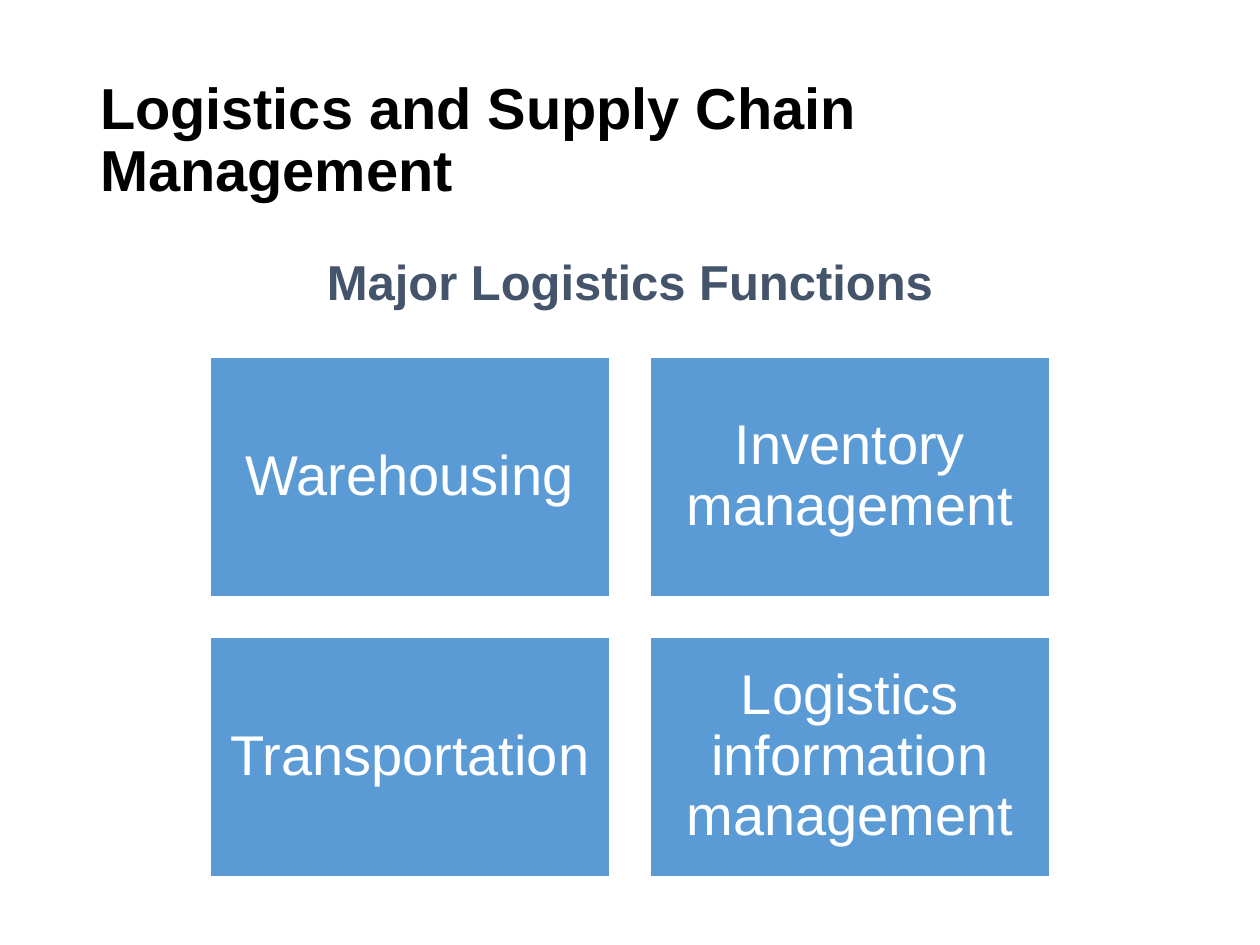
from dataclasses import dataclass

from pptx import Presentation
from pptx.dml.color import RGBColor
from pptx.enum.shapes import MSO_SHAPE as Shape
from pptx.enum.text import MSO_ANCHOR as Anchor, MSO_AUTO_SIZE as AutoSize, PP_ALIGN as Align
from pptx.util import Pt

PX = 914400 / 126  # EMU in one px


@dataclass(frozen=True)
class Theme:
    font: str = "Arial"
    black: str = "000000"
    slate: str = "44546A"
    blue: str = "5B9BD5"
    white: str = "FFFFFF"
    title_size: int = 33
    heading_size: int = 28
    card_size: int = 32


THEME = Theme()
FUNCTIONS = [
    "Warehousing",
    "Inventory management",
    "Transportation",
    "Logistics information management",
]


def px(length):
    return round(length * PX)


def write_text(box, text, *, size, color, bold=False, align=Align.LEFT,
               anchor=Anchor.TOP, margins=(13, 6)):
    frame = box.text_frame
    frame.word_wrap = True
    frame.auto_size = AutoSize.NONE
    frame.vertical_anchor = anchor
    frame.margin_left = frame.margin_right = px(margins[0])
    frame.margin_top = frame.margin_bottom = px(margins[1])
    para = frame.paragraphs[0]
    para.alignment = align
    para.line_spacing = 0.9
    span = para.add_run()
    span.text = text
    span.font.name = THEME.font
    span.font.size = Pt(size)
    span.font.bold = bold
    span.font.color.rgb = RGBColor.from_string(color)


def set_title(page, text):
    title = page.shapes.title
    title.left, title.top, title.width, title.height = map(px, (87, 50, 951, 183))
    write_text(title, text, size=THEME.title_size, color=THEME.black,
               bold=True, anchor=Anchor.MIDDLE)


def add_heading(page, text):
    box = page.shapes.add_textbox(*map(px, (87, 252, 1086, 63)))
    write_text(box, text, size=THEME.heading_size, color=THEME.slate,
               bold=True, align=Align.CENTER)


def add_card(page, text, left, top, width, height):
    card = page.shapes.add_shape(Shape.RECTANGLE, *map(px, (left, top, width, height)))
    card.shadow.inherit = False
    card.fill.solid()
    card.fill.fore_color.rgb = RGBColor.from_string(THEME.blue)
    card.line.color.rgb = RGBColor.from_string(THEME.white)
    card.line.width = Pt(1)
    write_text(card, text, size=THEME.card_size, color=THEME.white,
               align=Align.CENTER, anchor=Anchor.MIDDLE, margins=(16, 16))


def add_card_grid(page, labels, left=210, top=357, width=400, height=240, gap=40, columns=2):
    for index, label in enumerate(labels):
        row, column = divmod(index, columns)
        add_card(page, label, left + column * (width + gap),
                 top + row * (height + gap), width, height)


def main():
    deck = Presentation()
    deck.slide_width, deck.slide_height = px(1260), px(945)
    page = deck.slides.add_slide(deck.slide_layouts[5])  # title only

    # Title and heading
    set_title(page, "Logistics and Supply Chain Management")
    add_heading(page, "Major Logistics Functions")

    # Four functions
    add_card_grid(page, FUNCTIONS)

    deck.save("out.pptx")


if __name__ == "__main__":
    main()
